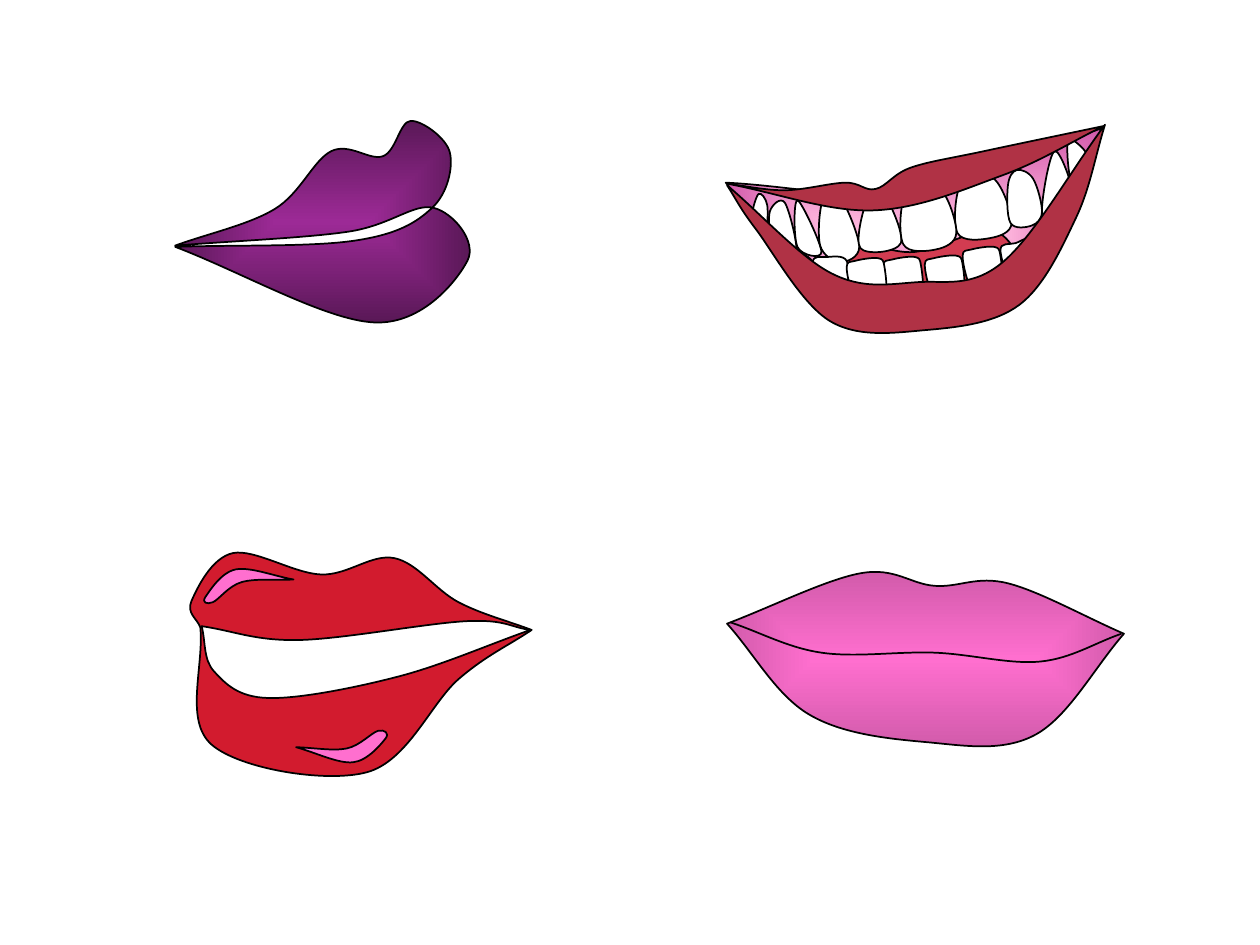
import math
from dataclasses import dataclass
from typing import Optional

import pptx
import pptx.dml.color
import pptx.oxml
import pptx.oxml.ns
import pptx.util
from pptx.util import Inches


@dataclass(frozen=True)
class Theme:
    outline: str = "000000"
    soft_outline: str = "010101"
    line_width: float = 1
    white: str = "FFFFFF"
    tongue: str = "D23C51"
    smile: str = "B03245"
    red: str = "D21B2E"
    highlight: str = "FF6FCF"
    pink: tuple = ("FF6FCF", "D25BAB")
    gum: tuple = ("FFB8DE", "D25BAB")
    purple: tuple = ("9C2A96", "5A1857")


THEME = Theme()
TOOTH_TILT = 351.2


@dataclass(frozen=True)
class Outline:
    """A smooth curve through points in inches, with sharp turns at the corners."""
    points: list
    corners: tuple = ()
    fill: object = THEME.white  # one colour, a (centre, edge) pair, or None
    rotation: float = 0
    closed: bool = True
    line: str = THEME.outline


def teeth(points: list, offsets: tuple = ((0, 0),), rotation: float = TOOTH_TILT) -> list:
    return [Outline([(x + right, y + down) for x, y in points], rotation=rotation)
            for right, down in offsets]


# Closed pink lips
PINK_LIPS = [
    Outline([(6.83, 4.55), (7.42, 4.65), (8, 4.63), (8.92, 5.03), (8.22, 5.83), (7.35, 5.89),
             (6.42, 5.67), (5.77, 4.95)], (3, 7), THEME.pink, line=THEME.soft_outline),
    Outline([(8.9, 5.03), (8.26, 5.25), (7.42, 5.18), (6.52, 5.18), (5.8, 4.94)],
            (0, 4), None, closed=False, line=THEME.soft_outline),
]

# Toothy smile: gum and tongue, upper teeth, lower teeth, lips
SMILE = [
    Outline([(5.76, 1.45), (6.63, 2.5), (7.35, 2.55), (8.05, 2.37), (8.49, 1.74), (8.74, 1.02),
             (7.25, 1.52)], (0, 5), THEME.gum),
    Outline([(6.58, 2.4), (7.38, 2.5), (8.1, 2.32), (7.91, 1.84), (7.26, 2), (6.73, 1.95)],
            (), THEME.tongue),
    *teeth([(8.48, 1.11), (8.65, 1.27), (8.51, 1.46)], rotation=336),
    *teeth([(5.97, 1.74), (6.07, 1.86), (6.09, 1.63), (6.02, 1.54)], rotation=0),
    *teeth([(6.32, 2), (6.14, 1.92), (6.11, 1.68), (6.23, 1.61)]),
    *teeth([(6.52, 2), (6.33, 1.96), (6.33, 1.59)]),
    *teeth([(6.67, 2.08), (6.82, 1.96), (6.67, 1.57), (6.53, 1.59), (6.51, 1.95)]),
    *teeth([(6.83, 1.97), (6.88, 1.59), (7.01, 1.53), (7.15, 1.93)]),
    *teeth([(7.6, 1.85), (7.63, 1.45), (7.89, 1.42), (8.03, 1.77), (7.86, 1.89)]),
    *teeth([(8.19, 1.79), (8.02, 1.77), (8, 1.47), (8.07, 1.35), (8.2, 1.42), (8.27, 1.68)]),
    *teeth([(8.52, 1.56), (8.4, 1.72), (8.27, 1.68), (8.37, 1.2)]),
    *teeth([(7.17, 1.94), (7.19, 1.54), (7.46, 1.5), (7.59, 1.85), (7.43, 1.98)]),
    *teeth([(6.29, 2.19), (6.27, 2), (6.45, 2.08), (6.46, 2.37)], rotation=0),
    *teeth([(6.51, 2.38), (6.45, 2.08), (6.56, 2.04), (6.72, 2.07), (6.72, 2.33), (6.64, 2.52)],
           rotation=0),
    *teeth([(0, 0), (0.07, -0.05), (0.25, -0.07), (0.3, 0), (0.31, 0.27), (0.2, 0.45),
            (0.06, 0.25)], ((7.34, 2.1), (7.01, 2.11), (6.72, 2.12), (7.64, 2.03))),
    *teeth([(8.23, 1.9), (8.06, 1.93), (7.94, 1.99), (8.08, 2.35)], rotation=0),
    Outline([(6.93, 1.67), (7.96, 1.39), (8.76, 1), (7.81, 1.2), (7.23, 1.33), (6.95, 1.5),
             (6.71, 1.45), (6.23, 1.51), (5.78, 1.46)], (2, 8), THEME.smile),
    Outline([(5.77, 1.47), (6, 1.82), (6.59, 2.55), (7.35, 2.62), (8.09, 2.42), (8.54, 1.73),
             (8.77, 0.99), (7.96, 2.08), (7.28, 2.24), (6.6, 2.17)], (0, 6), THEME.smile),
]

# Glossy red lips: lips, opening, two highlights
RED_LIPS = [
    Outline([(1.52, 4.77), (1.85, 4.39), (2.55, 4.56), (3.13, 4.43), (3.64, 4.78), (4.22, 5),
             (3.64, 5.39), (2.91, 6.13), (1.68, 5.91), (1.59, 4.98)], (5, 9), THEME.red),
    Outline([(2.37, 5.08), (3.71, 4.93), (4.21, 5), (3.16, 5.37), (2.13, 5.54), (1.7, 5.33),
             (1.6, 4.97)], (2, 6)),
    Outline([(1.87, 4.52), (2.33, 4.6), (1.92, 4.62), (1.69, 4.78), (1.63, 4.74)],
            (1,), THEME.highlight),
    Outline([(2.8, 6.05), (2.35, 5.93), (2.75, 5.94), (3, 5.8), (3.06, 5.86)],
            (1,), THEME.highlight, rotation=185.6),
]

# Purple lips seen from the side
PURPLE_LIPS = Outline(
    [(2.97, 2.56), (3.71, 2.07), (3.44, 1.65), (2.76, 1.84), (1.39, 1.95), (2.18, 1.66),
     (2.63, 1.2), (3.04, 1.24), (3.26, 0.96), (3.57, 1.21), (3.43, 1.65), (2.82, 1.91),
     (1.39, 1.96)], (4, 12), THEME.purple)


def add_element(parent, tag: str, **attributes):
    element = pptx.oxml.parse_xml(f"<{tag} {pptx.oxml.ns.nsdecls('a')}/>")
    for name, value in attributes.items():
        element.set(name, str(value))
    parent.append(element)
    return element


def smooth_curves(points: list, corners: tuple, closed: bool) -> list:
    """Cubic curves (start, two handles, end) whose handles follow the neighbouring points."""
    count = len(points)

    def handle(here: int, toward: int, away: int) -> complex:
        if here in corners:
            return points[here] + (points[toward] - points[here]) / 3
        return points[here] + (points[toward] - points[away]) / 6

    curves = []
    for index in range(count if closed else count - 1):
        following = (index + 1) % count
        curves.append((points[index], handle(index, following, index - 1),
                       handle(following, index, (index + 2) % count), points[following]))
    return curves


def curve_samples(curves: list) -> list:
    """Points along the curves, used to find their bounding box."""
    steps = [step / 20 for step in range(21)]
    return [a * (1 - t) ** 3 + 3 * b * t * (1 - t) ** 2 + 3 * c * t * t * (1 - t) + d * t ** 3
            for a, b, c, d in curves for t in steps]


def paint(shape, fill: Optional[object], line: str) -> None:
    color = pptx.dml.color.RGBColor.from_string
    shape.shadow.inherit = False
    shape.line.color.rgb = color(line)
    shape.line.width = pptx.util.Pt(THEME.line_width)
    if fill is None:
        shape.fill.background()
    elif isinstance(fill, str):
        shape.fill.solid()
        shape.fill.fore_color.rgb = color(fill)
    else:
        shape.fill.gradient()
        for stop, value in zip(shape.fill.gradient_stops, fill):
            stop.color.rgb = color(value)
        linear = next(shape._element.iter(pptx.oxml.ns.qn("a:lin")))
        gradient = linear.getparent()
        gradient.remove(linear)
        center = add_element(gradient, "a:path", path="rect")
        add_element(center, "a:fillToRect", **dict.fromkeys("ltrb", 50000))


def draw_outline(shapes, outline: Outline) -> None:
    # Turn the points back into the shape's own, unrotated frame
    angle = math.radians(outline.rotation)
    turn = complex(math.cos(angle), math.sin(angle))
    points = [complex(x, y) / turn for x, y in outline.points]
    curves = smooth_curves(points, outline.corners, outline.closed)
    samples = curve_samples(curves)
    xs, ys = [p.real for p in samples], [p.imag for p in samples]
    corner, size = complex(min(xs), min(ys)), complex(max(xs) - min(xs), max(ys) - min(ys))
    place = (corner + size / 2) * turn - size / 2

    # Frame the shape, then give its path the curves
    left, top = Inches(place.real), Inches(place.imag)
    right, bottom = left + Inches(size.real), top + Inches(size.imag)
    builder = shapes.build_freeform(left, top)
    builder.add_line_segments([(right, top), (right, bottom), (left, bottom)], close=outline.closed)
    shape = builder.convert_to_shape()
    path = next(shape._element.iter(pptx.oxml.ns.qn("a:path")))
    for child in list(path):
        path.remove(child)
    for command_points in [points[:1]] + [curve[1:] for curve in curves]:
        command = add_element(path, "a:cubicBezTo" if len(path) else "a:moveTo")
        for point in command_points:
            local = point - corner
            add_element(command, "a:pt", x=Inches(local.real), y=Inches(local.imag))
    if outline.closed:
        add_element(path, "a:close")
    shape.rotation = outline.rotation
    paint(shape, outline.fill, outline.line)


def main() -> None:
    presentation = pptx.Presentation()
    presentation.slide_width, presentation.slide_height = Inches(10), Inches(7.5)
    slide = presentation.slides.add_slide(presentation.slide_layouts[6])
    for mouth in (PINK_LIPS, SMILE, RED_LIPS):
        group = slide.shapes.add_group_shape()
        for outline in mouth:
            draw_outline(group.shapes, outline)
    draw_outline(slide.shapes, PURPLE_LIPS)
    presentation.save("out.pptx")


if __name__ == "__main__":
    main()
